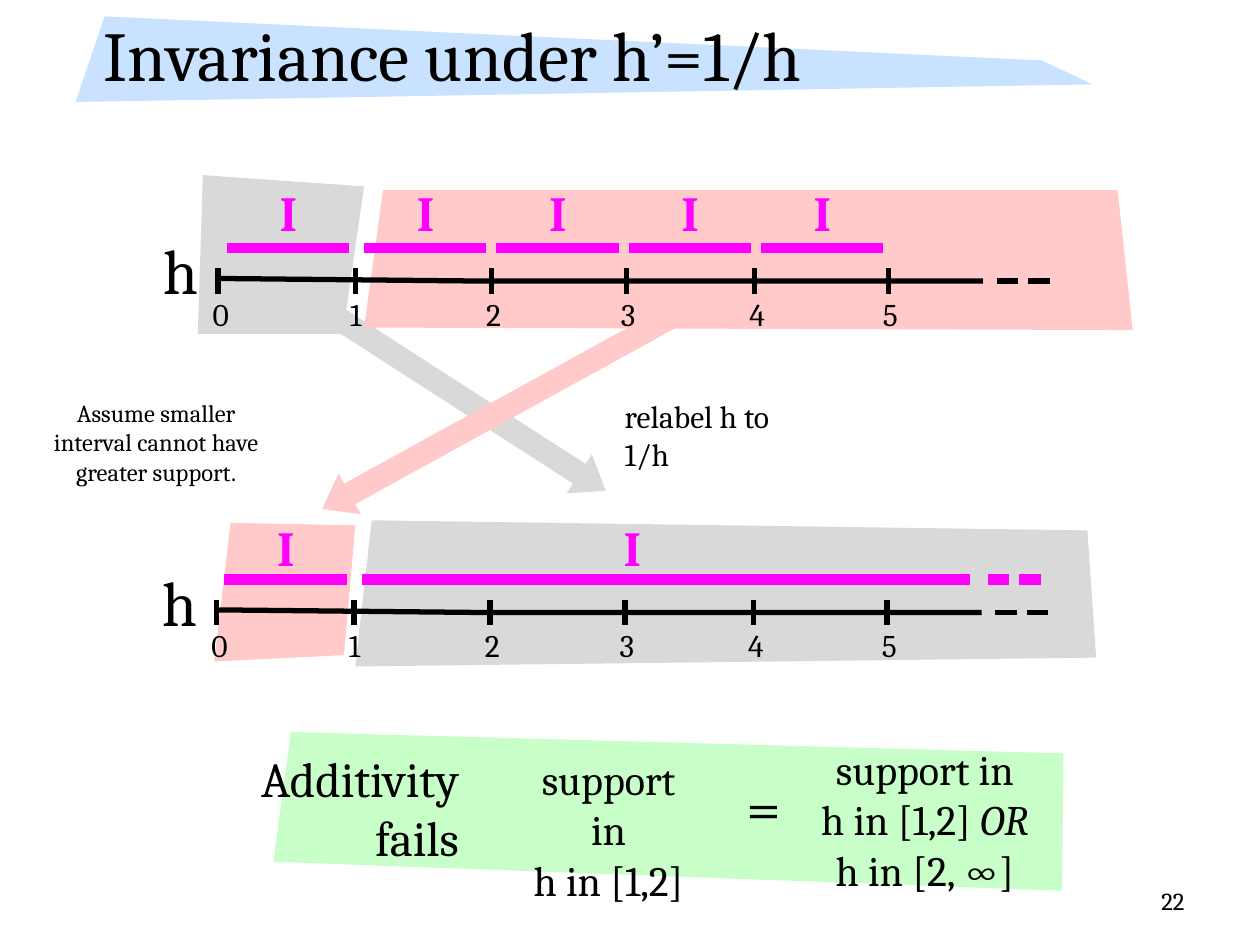
from dataclasses import dataclass

from lxml.etree import SubElement
from pptx import Presentation
from pptx.dml.color import RGBColor
from pptx.enum.shapes import MSO_CONNECTOR as Connector, MSO_SHAPE as Shape
from pptx.enum.text import MSO_ANCHOR as Anchor, PP_ALIGN as Align
from pptx.oxml.ns import qn
from pptx.util import Inches, Pt


@dataclass(frozen=True)
class Theme:
    font: str = "Cambria"
    black: RGBColor = RGBColor(0x00, 0x00, 0x00)
    gray: RGBColor = RGBColor(0xD9, 0xD9, 0xD9)
    pink: RGBColor = RGBColor(0xFF, 0xCA, 0xC9)
    blue: RGBColor = RGBColor(0xC8, 0xE2, 0xFF)
    green: RGBColor = RGBColor(0xC8, 0xFF, 0xC8)
    magenta: RGBColor = RGBColor(0xFF, 0x00, 0xFF)
    title: int = 40
    symbol: int = 36
    heading: int = 28
    formula: int = 24
    label: int = 18
    note: int = 14
    axis_line: int = 3
    bar_line: int = 6


THEME = Theme()

# Distances along an axis, measured from its left end
TICKS = (0.01, 1.1, 2.18, 3.25, 4.27, 5.33)
DASHES = (6.19, 6.44)
DASH_LENGTH = 0.17
UNIT_BAR = 0.97


def add_text(slide, box, lines, size, color=THEME.black, bold=False,
             align=Align.LEFT, anchor=Anchor.TOP):
    """Each line is a list of (text, italic) runs, or a plain string."""
    shape = slide.shapes.add_textbox(*map(Inches, box))
    frame = shape.text_frame
    frame.word_wrap = True
    frame.vertical_anchor = anchor
    for index, line in enumerate(lines):
        paragraph = frame.add_paragraph() if index else frame.paragraphs[0]
        paragraph.alignment = align
        runs = [(line, False)] if isinstance(line, str) else line
        for text, italic in runs:
            run = paragraph.add_run()
            run.text = text
            run.font.color.rgb = color
            font_format = {"name": THEME.font, "size": Pt(size),
                           "bold": bold, "italic": italic}
            for name, value in font_format.items():
                setattr(run.font, name, value)


def add_outline(slide, points, close=True):
    start, *rest = [(Inches(x), Inches(y)) for x, y in points]
    builder = slide.shapes.build_freeform(*start)
    builder.add_line_segments(rest, close=close)
    shape = builder.convert_to_shape()
    shape.shadow.inherit = False
    return shape


def paint(shape, color):
    shape.fill.solid()
    shape.fill.fore_color.rgb = color
    shape.line.fill.background()


def add_patch(slide, points, color):
    paint(add_outline(slide, points), color)


def add_arrow(slide, box, rotation, color):
    arrow = slide.shapes.add_shape(Shape.RIGHT_ARROW, *map(Inches, box))
    arrow.shadow.inherit = False
    arrow.rotation = rotation
    arrow.adjustments[0] = 0.5
    arrow.adjustments[1] = 0.675
    paint(arrow, color)


def add_line(slide, x1, y1, x2, y2, color, width):
    line = slide.shapes.add_connector(
        Connector.STRAIGHT, *map(Inches, (x1, y1, x2, y2)))
    line.line.color.rgb = color
    line.line.width = Pt(width)
    SubElement(line._element.spPr, qn("a:effectLst"))


def add_dashes(slide, left, y, color, width):
    for offset in DASHES:
        x = left + offset
        add_line(slide, x, y, x + DASH_LENGTH, y, color, width)


def add_axis(slide, left, top):
    level = top + 0.02
    axis = add_outline(
        slide, [(left, top), (left + 2.03, level), (left + 6.08, level)],
        close=False)
    axis.fill.background()
    axis.line.color.rgb = THEME.black
    axis.line.width = Pt(THEME.axis_line)

    add_text(slide, (left - 0.52, top - 0.42, 0.45, 0.7), ["h"], THEME.symbol)
    for number, offset in enumerate(TICKS):
        x = left + offset
        add_line(slide, x, top - 0.08, x, top + 0.12,
                 THEME.black, THEME.axis_line)
        add_text(slide, (x - 0.14, top + 0.08, 0.33, 0.4), [str(number)],
                 THEME.label)
    add_dashes(slide, left, level, THEME.black, THEME.axis_line)


def add_interval(slide, left, y, length, label_shift, label_rise):
    add_line(slide, left, y, left + length, y, THEME.magenta, THEME.bar_line)
    add_text(slide, (left + label_shift, y - label_rise, 0.35, 0.57), ["I"],
             THEME.heading, THEME.magenta, bold=True)


def main():
    presentation = Presentation()
    presentation.slide_width = Inches(10)
    presentation.slide_height = Inches(7.5)
    slide = presentation.slides.add_slide(presentation.slide_layouts[6])

    # Region of h from 0 to 1 and where it maps
    add_patch(slide, [(1.61, 1.39), (2.89, 1.48), (2.72, 2.65), (1.57, 2.65)],
              THEME.gray)
    add_patch(slide, [(2.95, 4.13), (8.63, 4.21), (8.7, 5.22), (2.82, 5.29)],
              THEME.gray)
    add_arrow(slide, (2.36, 2.99, 2.66, 0.37), 32.8, THEME.gray)
    add_text(slide, (4.86, 3.1, 1.72, 0.4), ["relabel h to 1/h"], THEME.label)

    # Region of h above 1 and where it maps
    add_patch(slide, [(1.83, 4.15), (1.7, 5.25), (2.73, 5.2), (2.82, 4.17)],
              THEME.pink)
    add_patch(slide, [(3.04, 1.51), (2.89, 2.6), (8.99, 2.62), (8.87, 1.51)],
              THEME.pink)
    add_arrow(slide, (2.35, 3.05, 3.34, 0.37), 151.2, THEME.pink)

    # Slide number and title
    add_text(slide, (7.17, 6.95, 2.33, 0.4), ["22"], THEME.note,
             align=Align.RIGHT, anchor=Anchor.MIDDLE)
    add_patch(slide, [(0.83, 0.13), (8.27, 0.48), (8.67, 0.67), (0.6, 0.81)],
              THEME.blue)
    add_text(slide, (0.72, 0.09, 8.77, 0.67), ["Invariance under h’=1/h"],
             THEME.title, anchor=Anchor.MIDDLE)

    # Lower axis: one unit interval and one open-ended interval
    add_axis(slide, 1.71, 4.84)
    add_interval(slide, 2.87, 4.6, 4.83, 1.98, 0.54)
    add_dashes(slide, 1.65, 4.6, THEME.magenta, THEME.bar_line)
    add_interval(slide, 1.78, 4.6, UNIT_BAR, 0.32, 0.54)
    add_text(slide, (0.27, 3.11, 1.94, 0.81),
             ["Assume smaller interval cannot have greater support."],
             THEME.note, align=Align.CENTER)

    # Upper axis: five unit intervals
    add_axis(slide, 1.72, 2.21)
    for left in (1.8, 2.89, 3.94, 4.99, 6.04):
        add_interval(slide, left, 1.97, UNIT_BAR, 0.32, 0.57)

    # Conclusion
    add_patch(slide, [(2.31, 5.81), (8.44, 5.98), (8.43, 7.07), (2.17, 6.84)],
              THEME.green)
    add_text(slide, (6.32, 5.85, 2.04, 1.31),
             ["support in", [("h in [1,2] ", False), ("OR", True)],
              "h in [2, ∞]"], THEME.formula, align=Align.CENTER)
    add_text(slide, (4.1, 5.93, 1.46, 0.91), ["support in", "h in [1,2]"],
             THEME.formula, align=Align.CENTER)
    add_text(slide, (1.73, 5.89, 2.01, 1.04), ["Additivity fails"],
             THEME.heading, align=Align.RIGHT)
    add_text(slide, (5.83, 6.04, 0.49, 0.71), ["="], THEME.symbol)

    presentation.save("out.pptx")


if __name__ == "__main__":
    main()
